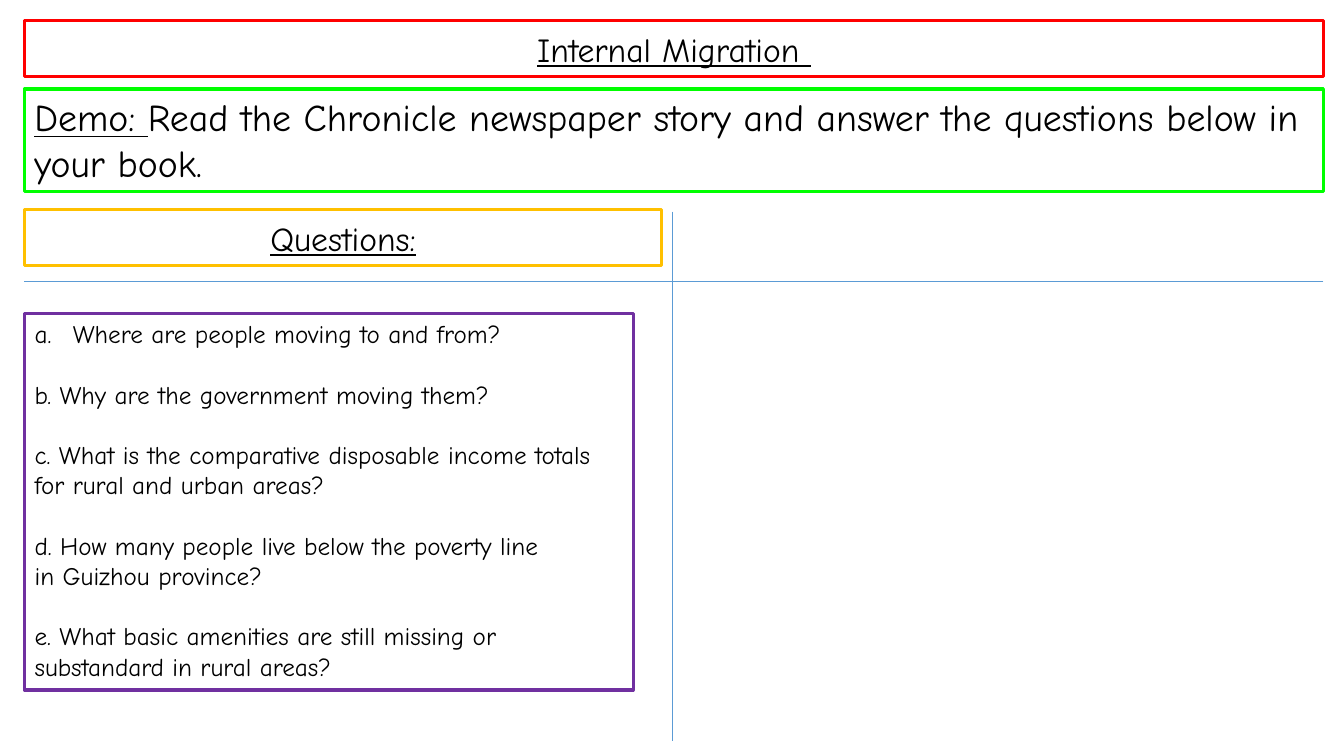
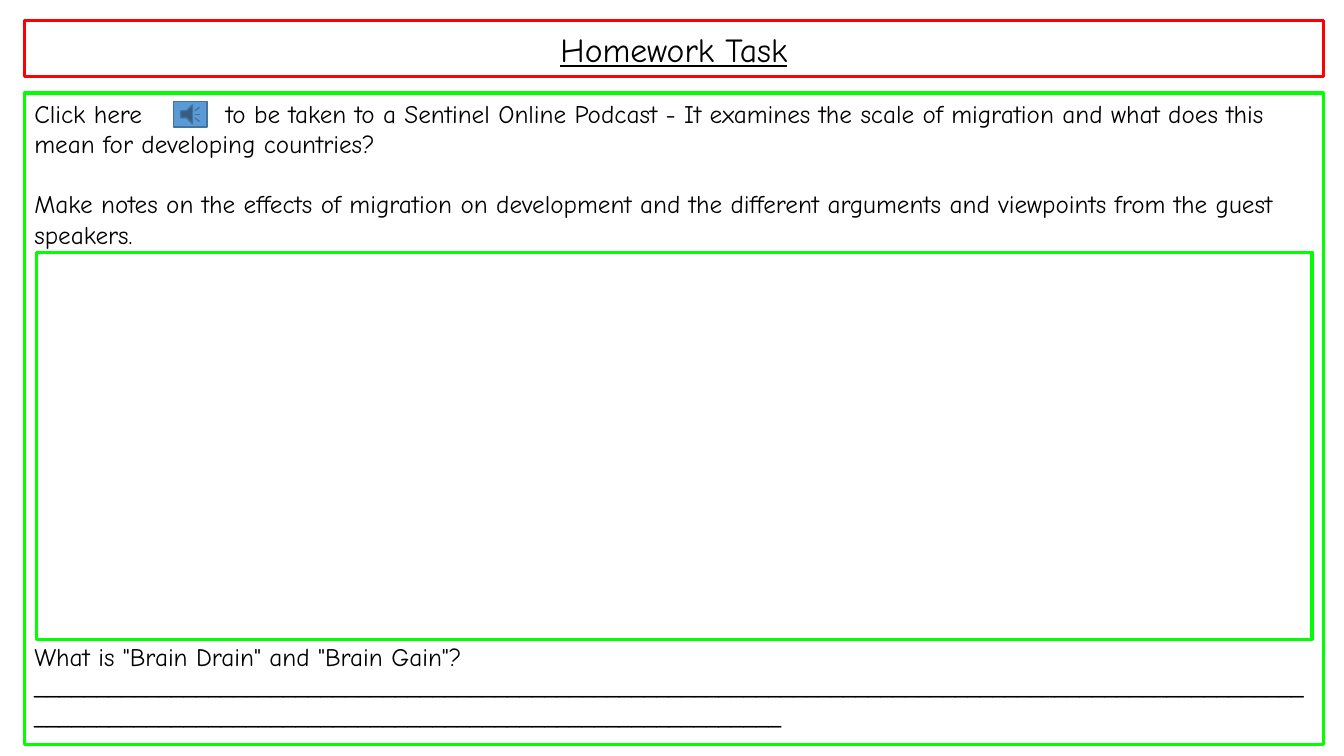
from lxml.etree import SubElement
from pptx import Presentation
from pptx.dml.color import RGBColor
from pptx.enum.shapes import MSO_CONNECTOR, MSO_SHAPE
from pptx.enum.text import MSO_ANCHOR as Anchor, MSO_AUTO_SIZE as AutoSize, PP_ALIGN as Align
from pptx.oxml.ns import qn
from pptx.util import Inches, Pt

BLACK = RGBColor(0x00, 0x00, 0x00)
RED = RGBColor(0xFF, 0x00, 0x00)
GREEN = RGBColor(0x00, 0xFF, 0x00)
AMBER = RGBColor(0xFF, 0xC0, 0x00)
PURPLE = RGBColor(0x70, 0x30, 0xA0)
BLUE = RGBColor(0x5B, 0x9B, 0xD5)
DARK_BLUE = RGBColor(0x43, 0x73, 0x9E)

FONT = "Comic Neue"
WIDTH, HEIGHT = Inches(13.33), Inches(7.5)
LEFT, FULL, BAR = 1.82, 96.65, 7.4
HEADING_SIZE, DEMO_SIZE, BODY_SIZE = 24, 27, 18
BODY_LINE = 21.55
LIST_LAYOUT, TITLE_LAYOUT = 1, 5

QUESTIONS = [
    "Where are people moving to and from?",
    "b. Why are the government moving them?",
    "c. What is the comparative disposable income totals for rural and urban areas?",
    "d. How many people live below the poverty line in\u00a0Guizhou province?",
    "e. What basic amenities are still missing or substandard in rural areas?",
]
HOMEWORK = [
    "Click here\tto be taken to a Sentinel Online Podcast - It examines the scale of "
    "migration and what does this mean for developing countries?",
    "Make notes on the effects of migration on development and the different arguments "
    "and viewpoints from the guest speakers.",
    'What is "Brain Drain" and "Brain Gain"?',
    "_" * 162,
]


def across(percent):
    """Return a share of the slide width."""
    return round(WIDTH * percent / 100)


def down(percent):
    """Return a share of the slide height."""
    return round(HEIGHT * percent / 100)


def area(left, top, width, height):
    """Turn percentages of the slide into a position and size."""
    return across(left), down(top), across(width), down(height)


def outline(shape, color, width=2.25):
    """Give a shape a solid outline."""
    shape.line.color.rgb = color
    shape.line.width = Pt(width)


def frame(shape, box, color, anchor=Anchor.TOP):
    """Place an outlined text shape and return its text frame."""
    shape.left, shape.top, shape.width, shape.height = area(*box)
    outline(shape, color)
    text_frame = shape.text_frame
    text_frame.word_wrap = True
    text_frame.auto_size = AutoSize.NONE
    text_frame.vertical_anchor = anchor
    return text_frame


def style(paragraph, size, underline=False, align=Align.LEFT):
    """Apply the shared lettering to a paragraph."""
    paragraph.alignment = align
    paragraph.font.name = FONT
    paragraph.font.size = Pt(size)
    paragraph.font.bold = False
    paragraph.font.underline = underline
    paragraph.font.color.rgb = BLACK


def heading(shape, text, box, color):
    """Write a centred, underlined heading in a coloured bar."""
    paragraph = frame(shape, box, color, Anchor.MIDDLE).paragraphs[0]
    paragraph.text = text
    style(paragraph, HEADING_SIZE, underline=True, align=Align.CENTER)


def text_list(shape, items, gaps, box, color):
    """Write paragraphs with the given blank lines before each."""
    text_frame = frame(shape, box, color)
    for index, (text, gap) in enumerate(zip(items, gaps)):
        paragraph = text_frame.paragraphs[0] if index == 0 else text_frame.add_paragraph()
        paragraph.text = text
        paragraph.space_before = Pt(gap * BODY_LINE)
        style(paragraph, BODY_SIZE)
    return text_frame.paragraphs


def set_marker(paragraph, numbered):
    """Choose between a lettered hanging indent and plain text."""
    properties = paragraph._p.get_or_add_pPr()
    indent = Inches(0.38) if numbered else 0
    properties.set("marL", str(indent))
    properties.set("indent", str(-indent))
    marker = SubElement(properties, qn("a:buAutoNum" if numbered else "a:buNone"))
    if numbered:
        marker.set("type", "alphaLcPeriod")
    move_font_last(properties)


def set_tab(paragraph, position):
    """Add a left tab stop to a paragraph."""
    properties = paragraph._p.get_or_add_pPr()
    tabs = SubElement(properties, qn("a:tabLst"))
    SubElement(tabs, qn("a:tab"), pos=str(position), algn="l")
    move_font_last(properties)


def move_font_last(properties):
    """Keep the paragraph font after its markers and tabs."""
    for font in properties.findall(qn("a:defRPr")):
        properties.append(font)


def divider(slide, start, end):
    """Draw a thin line between two points."""
    connector = slide.shapes.add_connector(
        MSO_CONNECTOR.STRAIGHT, across(start[0]), down(start[1]), across(end[0]), down(end[1])
    )
    outline(connector, BLUE, 0.5)
    SubElement(connector._element.spPr, qn("a:effectLst"))


def preset(slide, kind, box, color, width=2.25, fill=None):
    """Draw a preset shape with an optional fill."""
    shape = slide.shapes.add_shape(kind, *area(*box))
    shape.shadow.inherit = False
    outline(shape, color, width)
    if fill is None:
        shape.fill.background()
    else:
        shape.fill.solid()
        shape.fill.fore_color.rgb = fill


def text_box(slide):
    """Add an empty text box to be framed."""
    return slide.shapes.add_textbox(0, 0, 0, 0)


def titled_slide(presentation, layout, title):
    """Add a slide with the red title bar."""
    slide = presentation.slides.add_slide(presentation.slide_layouts[layout])
    heading(slide.shapes.title, title, (LEFT, 2.73, FULL, BAR), RED)
    return slide


def migration_slide(presentation):
    """Build the reading task with its questions."""
    slide = titled_slide(presentation, LIST_LAYOUT, "Internal Migration ")
    questions_box = (LEFT, 41.47, 45.3, 49.8)
    paragraphs = text_list(slide.placeholders[1], QUESTIONS, [0, 1, 1, 1, 1], questions_box, PURPLE)
    for index, paragraph in enumerate(paragraphs):
        set_marker(paragraph, numbered=index == 0)

    demo = frame(text_box(slide), (LEFT, 11.77, FULL, 13.6), GREEN).paragraphs[0]
    style(demo, DEMO_SIZE)
    label, task = demo.add_run(), demo.add_run()
    label.text = "Demo: "
    label.font.underline = True
    task.text = "Read the Chronicle newspaper story and answer the questions below in your book."

    heading(text_box(slide), "Questions:", (LEFT, 27.73, 47.4, BAR), AMBER)
    divider(slide, (50, 28), (50, 98))
    divider(slide, (LEFT + FULL, 37.2), (LEFT, 37.2))


def homework_slide(presentation):
    """Build the podcast homework with its notes area."""
    slide = titled_slide(presentation, TITLE_LAYOUT, "Homework Task")
    task_box = (LEFT, 12.3, FULL, 86.2)
    paragraphs = text_list(text_box(slide), HOMEWORK, [0, 1, 13, 0], task_box, GREEN)
    set_tab(paragraphs[0], Inches(1.9))
    preset(slide, MSO_SHAPE.ACTION_BUTTON_SOUND, (12.9, 13.47, 2.5, 3.33), DARK_BLUE, 1, BLUE)
    preset(slide, MSO_SHAPE.RECTANGLE, (2.72, 33.35, 94.9, 51.2), GREEN)


def main():
    """Create and save the presentation."""
    presentation = Presentation()
    presentation.slide_width, presentation.slide_height = WIDTH, HEIGHT
    migration_slide(presentation)
    homework_slide(presentation)
    presentation.save("out.pptx")


if __name__ == "__main__":
    main()
